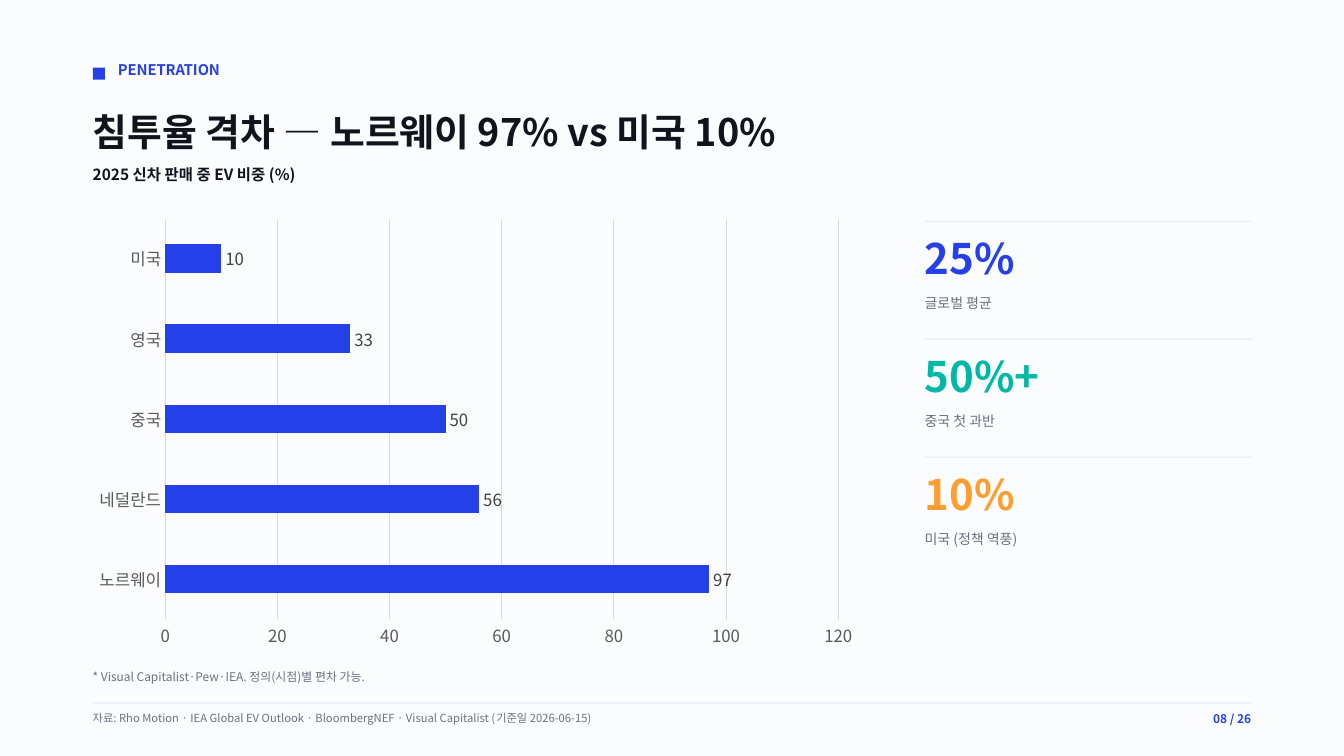
from dataclasses import dataclass

from lxml.etree import SubElement
from pptx import Presentation
from pptx.chart.data import CategoryChartData
from pptx.dml.color import RGBColor
from pptx.enum.chart import XL_CHART_TYPE, XL_LABEL_POSITION, XL_TICK_MARK
from pptx.enum.shapes import MSO_SHAPE
from pptx.enum.text import MSO_AUTO_SIZE, PP_ALIGN
from pptx.oxml.ns import qn
from pptx.util import Inches, Pt


@dataclass(frozen=True)
class Theme:
    font: str = "Noto Sans CJK KR"
    # Colours
    background: str = "FBFCFE"
    ink: str = "10141C"
    muted: str = "69727E"
    rule: str = "E3E8F2"
    blue: str = "2540E8"
    teal: str = "00B8A6"
    orange: str = "FF9D2E"
    grid: str = "D9D9D9"
    axis_text: str = "595959"
    label_text: str = "404040"
    # Type sizes
    title: float = 27
    figure: float = 30
    chart: float = 12
    subtitle: float = 11
    kicker: float = 10.5
    caption: float = 10
    note: float = 8.5
    source: float = 8


THEME = Theme()
LEFT, CONTENT_WIDTH = 0.92, 11.5
STATS_LEFT, STATS_TOP, STATS_WIDTH, STATS_STEP = 9.17, 2.19, 3.25, 1.17


def rgb(value):
    return RGBColor.from_string(value)


def set_font(font, size, color, bold=False):
    font.name = THEME.font
    font.size = Pt(size)
    font.bold = bold
    font.color.rgb = rgb(color)


def add_text(slide, box, text, size, color, bold=False, align=PP_ALIGN.LEFT, wrap=True):
    shape = slide.shapes.add_textbox(*map(Inches, box))
    frame = shape.text_frame
    frame.margin_left = frame.margin_right = frame.margin_top = frame.margin_bottom = 0
    frame.word_wrap = wrap
    frame.auto_size = MSO_AUTO_SIZE.SHAPE_TO_FIT_TEXT
    paragraph = frame.paragraphs[0]
    paragraph.text = text
    paragraph.alignment = align
    set_font(paragraph.font, size, color, bold)
    # Hangul takes its typeface from the East Asian font
    properties = paragraph._p.pPr.find(qn("a:defRPr"))
    SubElement(properties, qn("a:ea"), typeface=THEME.font)


def add_block(slide, box, color):
    shape = slide.shapes.add_shape(MSO_SHAPE.RECTANGLE, *map(Inches, box))
    shape.shadow.inherit = False
    shape.fill.solid()
    shape.fill.fore_color.rgb = rgb(color)
    shape.line.fill.background()


def add_rule(slide, left, top, width):
    add_block(slide, (left, top, width, 0.01), THEME.rule)


def add_stat(slide, top, figure, caption, color):
    add_rule(slide, STATS_LEFT, top, STATS_WIDTH)
    add_text(slide, (STATS_LEFT, top + 0.12, STATS_WIDTH, 0.5),
             figure, THEME.figure, color, bold=True)
    add_text(slide, (STATS_LEFT, top + 0.73, STATS_WIDTH, 0.17),
             caption, THEME.caption, THEME.muted)


def style_axis(axis):
    axis.major_tick_mark = axis.minor_tick_mark = XL_TICK_MARK.NONE
    set_font(axis.tick_labels.font, THEME.chart, THEME.axis_text)


def style_line(line):
    line.color.rgb = rgb(THEME.grid)
    line.width = Pt(0.75)


def add_bar_chart(slide, box, shares):
    data = CategoryChartData()
    data.categories = list(shares)
    data.add_series("Series 1", list(shares.values()))
    chart = slide.shapes.add_chart(
        XL_CHART_TYPE.BAR_CLUSTERED, *map(Inches, box), data).chart
    chart.has_legend = False
    chart.has_title = False
    set_font(chart.font, THEME.chart, THEME.axis_text)

    # Axes
    style_axis(chart.category_axis)
    style_line(chart.category_axis.format.line)
    value_axis = chart.value_axis
    style_axis(value_axis)
    value_axis.minimum_scale, value_axis.maximum_scale = 0, 120
    value_axis.major_unit = 20
    value_axis.format.line.fill.background()
    value_axis.has_major_gridlines = True
    style_line(value_axis.major_gridlines.format.line)

    # Bars and value labels
    plot = chart.plots[0]
    plot.gap_width = 182
    plot.vary_by_categories = False
    fill = plot.series[0].format.fill
    fill.solid()
    fill.fore_color.rgb = rgb(THEME.blue)
    plot.has_data_labels = True
    labels = plot.data_labels
    labels.show_value = True
    labels.position = XL_LABEL_POSITION.OUTSIDE_END
    set_font(labels.font, THEME.chart, THEME.label_text)


def main():
    presentation = Presentation()
    presentation.slide_width = Inches(13.33)
    presentation.slide_height = Inches(7.5)
    slide = presentation.slides.add_slide(presentation.slide_layouts[6])
    slide.background.fill.solid()
    slide.background.fill.fore_color.rgb = rgb(THEME.background)

    # Heading
    add_block(slide, (LEFT, 0.67, 0.12, 0.12), THEME.blue)
    add_text(slide, (1.17, 0.6, 1.02, 0.18), "PENETRATION",
             THEME.kicker, THEME.blue, bold=True, wrap=False)
    add_text(slide, (LEFT, 1.08, CONTENT_WIDTH, 0.45),
             "침투율 격차 — 노르웨이 97% vs 미국 10%", THEME.title, THEME.ink, bold=True)
    add_text(slide, (LEFT, 1.64, 7.5, 0.19), "2025 신차 판매 중 EV 비중 (%)",
             THEME.subtitle, THEME.ink, bold=True)

    # Key figures
    stats = [
        ("25%", "글로벌 평균", THEME.blue),
        ("50%+", "중국 첫 과반", THEME.teal),
        ("10%", "미국 (정책 역풍)", THEME.orange),
    ]
    for index, stat in enumerate(stats):
        add_stat(slide, STATS_TOP + index * STATS_STEP, *stat)

    # Note and footer
    add_text(slide, (LEFT, 6.64, CONTENT_WIDTH, 0.14),
             "* Visual Capitalist·Pew·IEA. 정의(시점)별 편차 가능.", THEME.note, THEME.muted)
    add_rule(slide, LEFT, 6.97, CONTENT_WIDTH)
    add_text(slide, (LEFT, 7.06, 10.67, 0.13),
             "자료: Rho Motion · IEA Global EV Outlook · BloombergNEF · "
             "Visual Capitalist (기준일 2026-06-15)", THEME.source, THEME.muted)
    add_text(slide, (11.58, 7.06, 0.83, 0.14), "08 / 26",
             THEME.note, THEME.blue, bold=True, align=PP_ALIGN.RIGHT)

    # EV share by country
    add_bar_chart(slide, (0.83, 2.08, 7.78, 4.44),
                  {"노르웨이": 97, "네덜란드": 56, "중국": 50, "영국": 33, "미국": 10})

    presentation.save("out.pptx")


if __name__ == "__main__":
    main()
